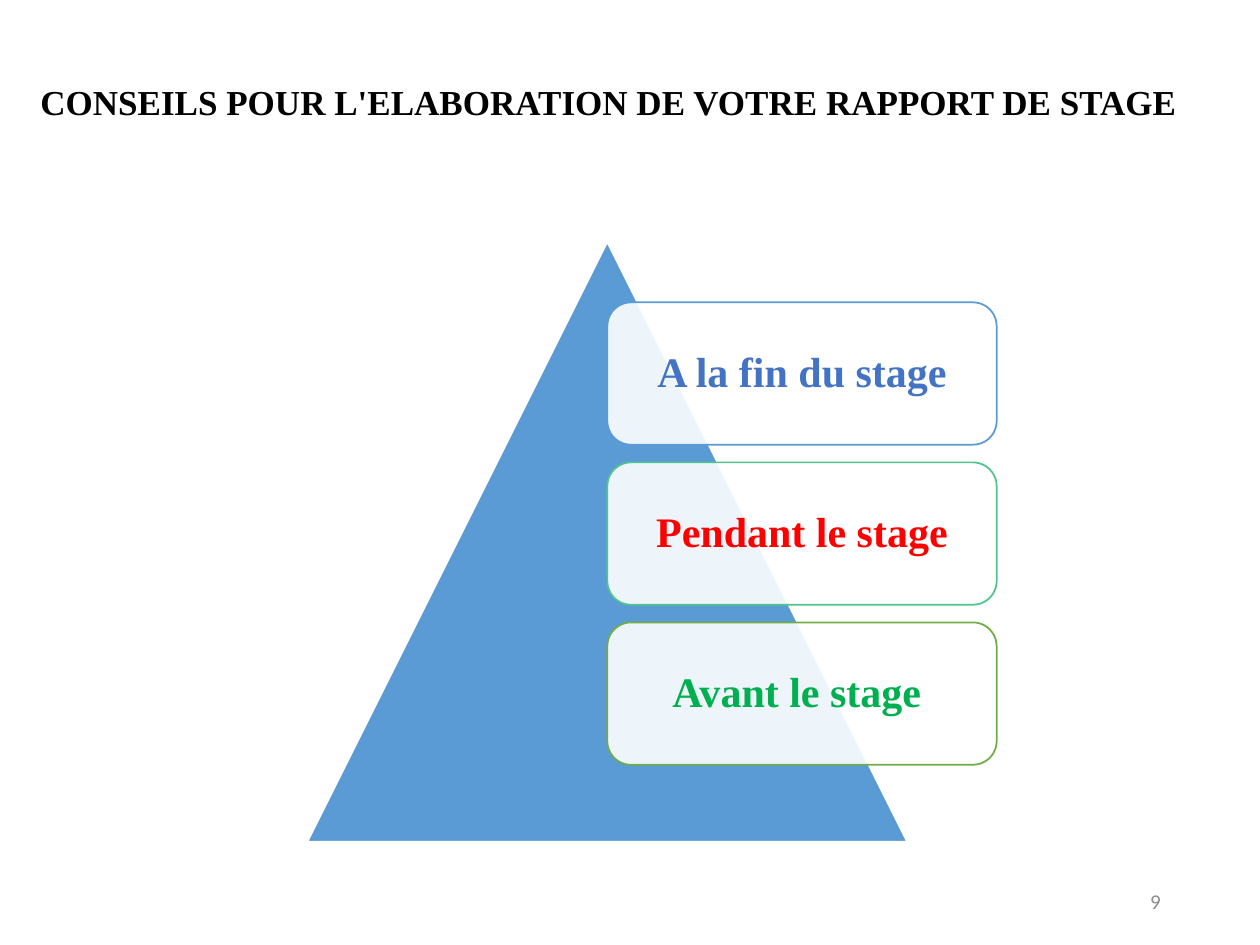
from lxml import etree
from pptx import Presentation
from pptx.dml.color import RGBColor
from pptx.enum.shapes import MSO_SHAPE
from pptx.enum.text import MSO_ANCHOR, PP_ALIGN
from pptx.oxml.ns import qn
from pptx.util import Inches, Pt


def color(hex_code):
    return RGBColor.from_string(hex_code)


class StageSlide:
    """Holds the current slide and its text and shape style."""

    heading_font = "Times New Roman"
    number_font = "Calibri"

    def __init__(self, presentation):
        self.slide = presentation.slides.add_slide(presentation.slide_layouts[5])

    def add_text(self, frame, text, size, hex_code, font, align, bold=True, spacing=0.9):
        frame.word_wrap = True
        frame.vertical_anchor = MSO_ANCHOR.MIDDLE
        paragraph = frame.paragraphs[0]
        paragraph.alignment = align
        paragraph.line_spacing = spacing
        run = paragraph.add_run()
        run.text = text
        run.font.size = Pt(size)
        run.font.name = font
        run.font.bold = bold
        run.font.color.rgb = color(hex_code)

    def title(self, text, left, top, width, height):
        heading = self.slide.shapes.title
        heading.left, heading.top = Inches(left), Inches(top)
        heading.width, heading.height = Inches(width), Inches(height)
        self.add_text(heading.text_frame, text, 20, "000000", self.heading_font, PP_ALIGN.LEFT)

    def shape(self, preset, left, top, width, height, fill, line, opacity=100):
        """Add a preset shape; opacity is a percentage."""
        shape = self.slide.shapes.add_shape(
            preset, Inches(left), Inches(top), Inches(width), Inches(height))
        shape.shadow.inherit = False
        shape.fill.solid()
        shape.fill.fore_color.rgb = color(fill)
        shape.line.color.rgb = color(line)
        shape.line.width = Pt(1)
        if opacity < 100:
            fill_color = shape._element.spPr.find(qn("a:solidFill"))[0]
            etree.SubElement(fill_color, qn("a:alpha"), val=str(opacity * 1000))
        return shape

    def step(self, text, text_color, border, left, top, width, height):
        card = self.shape(MSO_SHAPE.ROUNDED_RECTANGLE, left, top, width, height,
                          "FFFFFF", border, opacity=90)
        self.add_text(card.text_frame, text, 24, text_color, self.heading_font, PP_ALIGN.CENTER)

    def page_number(self, text, left, top, width, height):
        box = self.slide.shapes.add_textbox(
            Inches(left), Inches(top), Inches(width), Inches(height))
        self.add_text(box.text_frame, text, 12, "8C8C8C", self.number_font,
                      PP_ALIGN.RIGHT, bold=False, spacing=1.0)


STEPS = [
    ("A la fin du stage", "4472C4", "5B9BD5"),
    ("Pendant le stage", "FF0000", "4DC58D"),
    ("Avant le stage ", "00B050", "70AD47"),
]
FIRST_STEP_TOP, STEP_HEIGHT = 2.4, 1.13
STEP_GAP = 0.14


def main():
    presentation = Presentation()
    presentation.slide_width, presentation.slide_height = Inches(10), Inches(7.5)
    page = StageSlide(presentation)
    page.title("CONSEILS POUR L'ELABORATION DE VOTRE RAPPORT DE STAGE", 0.22, 0.1, 9.56, 1.45)
    page.shape(MSO_SHAPE.ISOSCELES_TRIANGLE, 2.44, 1.92, 4.76, 4.76, "5B9BD5", "FFFFFF")
    for index, (text, text_color, border) in enumerate(STEPS):
        top = FIRST_STEP_TOP + index * (STEP_HEIGHT + STEP_GAP)
        page.step(text, text_color, border, 4.82, top, 3.09, STEP_HEIGHT)
    page.page_number("9", 7.06, 6.95, 2.25, 0.4)
    presentation.save("out.pptx")


if __name__ == "__main__":
    main()
